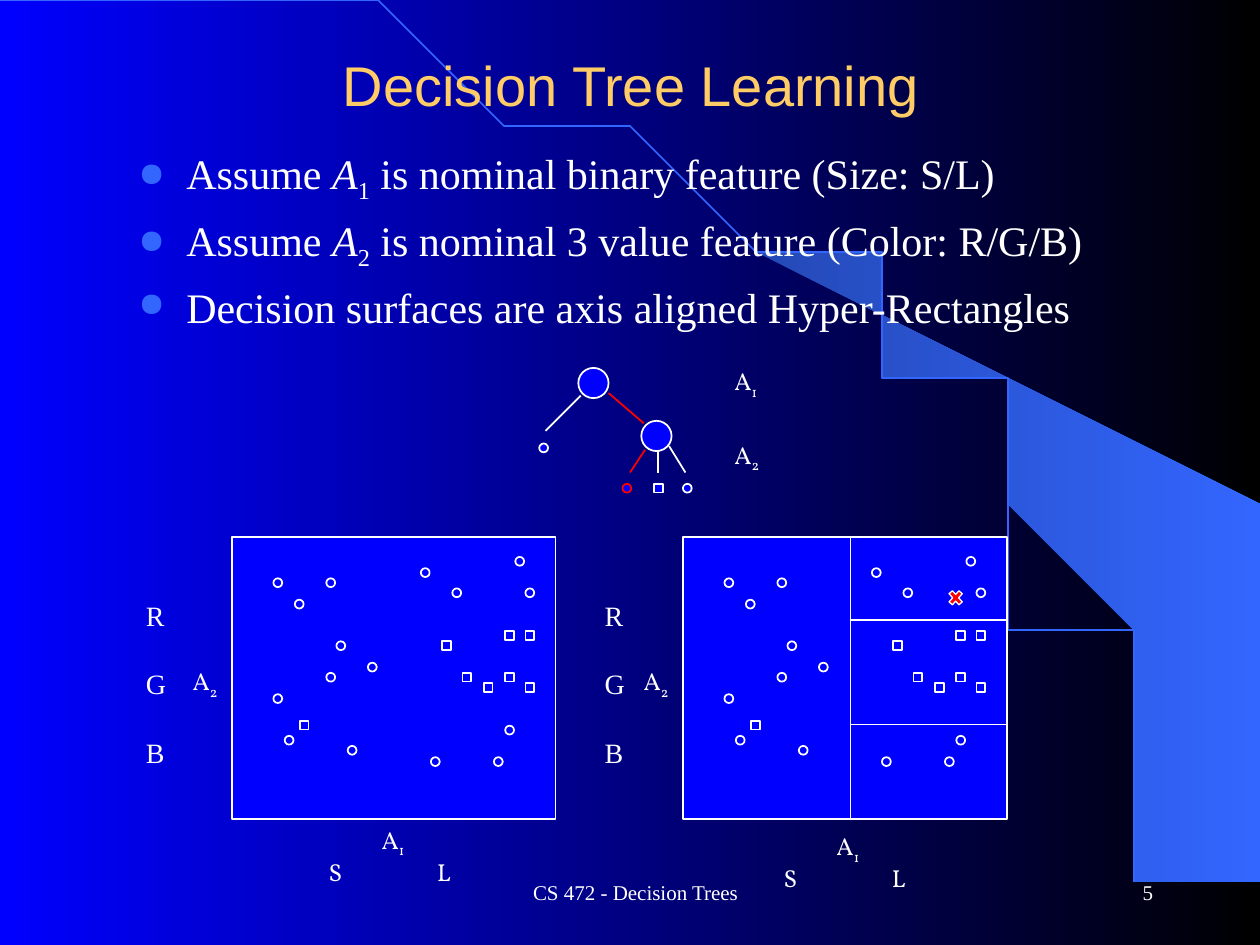
import math

import lxml.etree
import pptx
import pptx.dml.color
import pptx.enum.shapes
import pptx.enum.text
import pptx.oxml.ns
import pptx.util

Inches = pptx.util.Inches
Pt = pptx.util.Pt
KIND = pptx.enum.shapes.MSO_SHAPE
ALIGN = pptx.enum.text.PP_ALIGN
ANCHOR = pptx.enum.text.MSO_ANCHOR
WHITE, BLUE, RED, SKY = "FFFFFF", "0000FF", "FF0000", "3366FF"
SERIF, LABEL = "Times New Roman", "Vollkorn"
DOT = 0.07
CIRCLES = [(0.33, 0.33), (0.5, 0.5), (0.75, 0.33), (2.33, 0.41), (2.25, 0.16),
           (0.42, 1.58), (0.33, 1.25), (0.75, 1.08), (0.83, 0.83), (1.75, 0.41),
           (1.58, 1.75), (2.08, 1.75), (1.08, 1), (0.92, 1.66), (1.5, 0.25)]
SQUARES = [(2.17, 0.75), (2.33, 0.75), (0.54, 1.46), (1.83, 1.08),
           (2, 1.16), (2.33, 1.16), (1.67, 0.83), (2.17, 1.08)]


def color(code):
    """Turn a hex string into a colour."""
    return pptx.dml.color.RGBColor.from_string(code)


def blend(fill, first, last):
    """Fill from left to right between two colours."""
    fill.gradient()
    fill.gradient_angle = 0
    for stop, code in zip(fill.gradient_stops, (first, last)):
        stop.color.rgb = color(code)


def shape(slide, kind, box, fill=BLUE, line=WHITE, width=1):
    """Add a filled and outlined preset shape."""
    item = slide.shapes.add_shape(kind, *map(Inches, box))
    item.shadow.inherit = False
    item.fill.solid()
    item.fill.fore_color.rgb = color(fill)
    item.line.color.rgb = color(line)
    item.line.width = Pt(width)


def line(slide, start, end, code=WHITE):
    """Add a straight line without a shadow."""
    item = slide.shapes.add_connector(
        pptx.enum.shapes.MSO_CONNECTOR.STRAIGHT, *map(Inches, start + end))
    item.line.color.rgb = color(code)
    item.line.width = Pt(1)
    lxml.etree.SubElement(item._element.spPr, pptx.oxml.ns.qn("a:effectLst"))


def text(slide, box, rows, size, font=SERIF, code=WHITE, align=ALIGN.LEFT,
         anchor=ANCHOR.TOP, wrap=True, gap=0):
    """Add a text box whose rows are lists of (words, style) runs."""
    frame = slide.shapes.add_textbox(*map(Inches, box)).text_frame
    frame.word_wrap = wrap
    frame.vertical_anchor = anchor
    for index, row in enumerate(rows):
        para = frame.add_paragraph() if index else frame.paragraphs[0]
        para.alignment = align
        para.space_before = Pt(gap)
        for words, style in row:
            run = para.add_run()
            run.text = words
            run.font.size = Pt(size)
            run.font.name = font
            run.font.color.rgb = color(code)
            if style == "italic":
                run.font.italic = True
            elif style == "sub":
                run._r.get_or_add_rPr().set("baseline", "-25000")
    return frame


def bullet(para):
    """Give a paragraph a round bullet and a hanging indent."""
    qn = pptx.oxml.ns.qn
    props = para._p.get_or_add_pPr()
    props.set("marL", str(Inches(0.38)))
    props.set("indent", str(-Inches(0.38)))
    tint = lxml.etree.SubElement(props, qn("a:buClr"))
    lxml.etree.SubElement(tint, qn("a:srgbClr")).set("val", SKY)
    lxml.etree.SubElement(props, qn("a:buSzPct")).set("val", "80000")
    lxml.etree.SubElement(props, qn("a:buChar")).set("char", "●")


def label(slide, left, top, name, sub=""):
    """Add a short label with an optional subscript."""
    row = [(name, "")] + ([(sub, "sub")] if sub else [])
    text(slide, (left, top, 0.41, 0.33), [row], 14, LABEL, wrap=False)


def outline(slide, points, close):
    """Build an outline through points given in inches."""
    build = slide.shapes.build_freeform(*points[0], scale=Inches(1))
    build.add_line_segments(points[1:], close=close)
    item = build.convert_to_shape()
    item.shadow.inherit = False
    return item


def backdrop(slide, wide, high):
    """Draw the gradient, the beam and the arc."""
    blend(slide.background.fill, BLUE, "000000")
    beam = outline(slide, [
        (9.2, 7.48), (9.99, 7.49), (9.99, 4.23), (5.89, 1.73), (6.24, 1.99),
        (6.53, 2.22), (6.85, 2.5), (7.16, 2.8), (7.62, 3.3), (8.03, 3.84),
        (8.32, 4.31), (8.58, 4.79), (8.78, 5.28), (8.93, 5.72), (9.03, 6.09),
        (9.13, 6.56), (9.17, 6.96)], True)
    blend(beam.fill, "2449B6", SKY)
    beam.line.fill.background()
    turns = [math.pi / 2 * step / 60 for step in range(61)]
    arc = outline(slide, [(wide * math.sin(turn), high * (1 - math.cos(turn)))
                          for turn in turns], False)
    arc.fill.background()
    arc.line.color.rgb = color(SKY)
    arc.line.width = Pt(1)


def body(slide, box):
    """Write the three bullet points."""
    rows = [[("Assume ", ""), ("A", "italic"), (digit, "sub"), (rest, "")]
            for digit, rest in (
                ("1", " is nominal binary feature (Size: S/L)"),
                ("2", " is nominal 3 value feature (Color: R/G/B)"))]
    rows.append([("Decision surfaces are axis aligned Hyper-Rectangles", "")])
    for para in text(slide, box, rows, 24, gap=5.5).paragraphs:
        bullet(para)


def tree(slide, left, top):
    """Draw the decision tree with its level labels."""
    for start, end, code in (
            ((0.33, 0.22), (0.05, 0.5), WHITE), ((0.55, 0.2), (0.83, 0.44), RED),
            ((0.84, 0.65), (0.72, 0.83), RED), ((0.94, 0.66), (0.94, 0.83), WHITE),
            ((1.03, 0.62), (1.16, 0.83), WHITE)):
        line(slide, (left + start[0], top + start[1]),
             (left + end[0], top + end[1]), code)
    for x, y, kind, code in (
            (0, 0.6, KIND.OVAL, WHITE), (0.66, 0.92, KIND.OVAL, RED),
            (1.14, 0.92, KIND.OVAL, WHITE), (0.91, 0.92, KIND.RECTANGLE, WHITE)):
        shape(slide, kind, (left + x, top + y, DOT, DOT), line=code)
    for x, y in ((0.31, 0), (0.81, 0.42)):
        shape(slide, KIND.OVAL, (left + x, top + y, 0.24, 0.24))
    for y, digit in ((-0.06, "1"), (0.52, "2")):
        label(slide, left + 1.45, top + y, "A", digit)


def plot(slide, box, extra, side, foot):
    """Draw one scatter panel with its axis labels."""
    left, top = box[:2]
    shape(slide, KIND.RECTANGLE, box)
    for kind, spots in ((KIND.OVAL, CIRCLES + [extra]), (KIND.RECTANGLE, SQUARES)):
        for x, y in spots:
            shape(slide, kind, (left + x, top + y, DOT, DOT))
    label(slide, left - 0.41, top + 0.98, "A", "2")
    text(slide, (left + side, top + 0.44, 0.37, 1.45),
         [[(name, "")] for name in "RGB"], 16, wrap=False, gap=20)
    x, y = left + foot[0], top + foot[1]
    label(slide, x, y, "A", "1")
    label(slide, x - 0.42, y + 0.25, "S")
    label(slide, x + 0.44, y + 0.25, "L")


def splits(slide, box):
    """Cut a panel into regions and mark the new case."""
    left, top, wide, high = box
    mid, right = left + 1.33, left + wide
    line(slide, (mid, top), (mid, top + high))
    for y in (0.66, 1.49):
        line(slide, (mid, top + y), (right, top + y))
    shape(slide, KIND.MATH_MULTIPLY, (left + 2.09, top + 0.4, 0.15, 0.17),
          RED, WHITE, 0.75)


def main():
    """Build the slide and save it."""
    deck = pptx.Presentation()
    deck.slide_width, deck.slide_height = Inches(10), Inches(7.5)
    slide = deck.slides.add_slide(deck.slide_layouts[6])
    backdrop(slide, 9.2, 7.49)
    for box, words, align in (
            ((3.17, 6.83, 3.75, 0.5), "CS 472 - Decision Trees", ALIGN.CENTER),
            ((7.17, 6.83, 2.08, 0.5), "5", ALIGN.RIGHT)):
        text(slide, box, [[(words, "")]], 12, align=align, anchor=ANCHOR.MIDDLE)
    text(slide, (0.76, 0.21, 8.5, 0.92), [[("Decision Tree Learning", "")]], 32,
         "Arial", "FFCC66", ALIGN.CENTER, ANCHOR.MIDDLE)
    body(slide, (1, 1.12, 7.75, 1.62))
    plot(slide, (1.84, 4.26, 2.57, 2.24), (2.17, 1.5), -0.78, (1.09, 2.24))
    panel = (5.42, 4.26, 2.57, 2.24)
    plot(slide, panel, (2.17, 1.58), -0.72, (1.12, 2.29))
    splits(slide, panel)
    tree(slide, 4.28, 2.92)
    deck.save("out.pptx")


if __name__ == "__main__":
    main()
